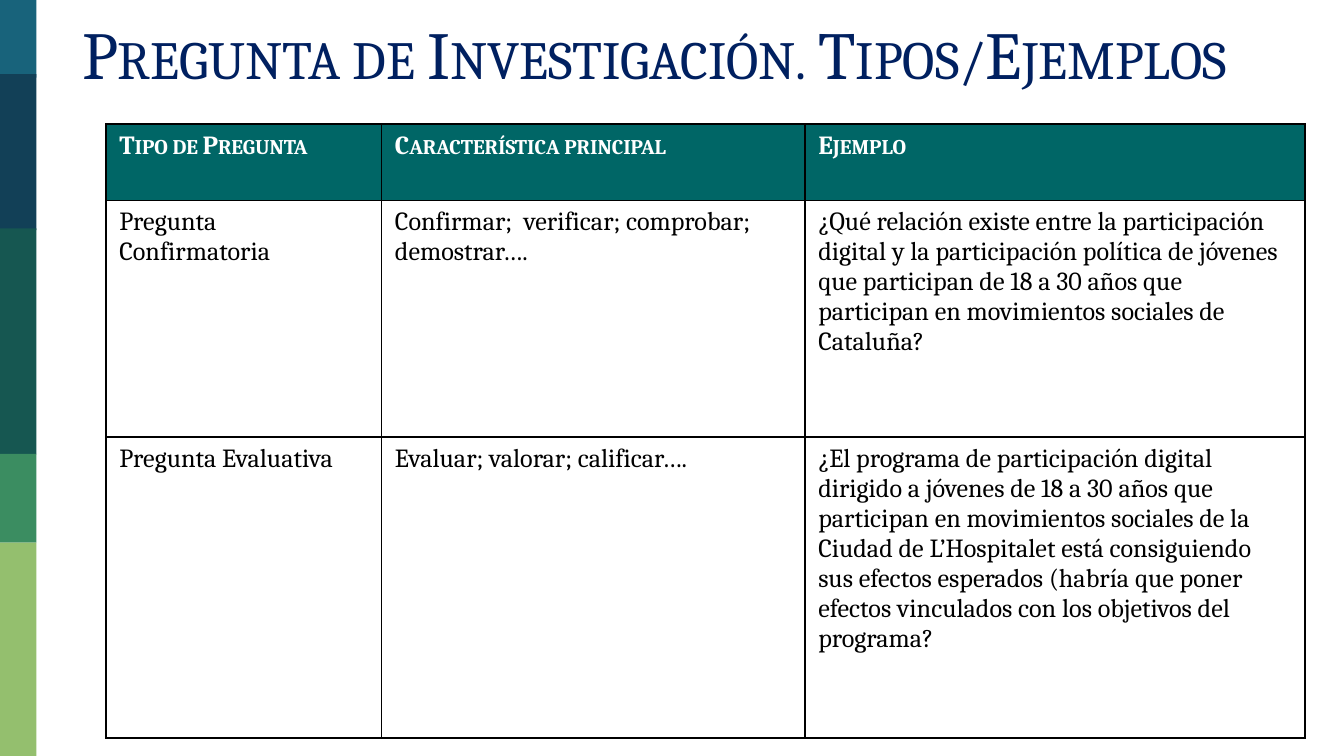
from lxml.etree import SubElement
from pptx import Presentation
from pptx.dml.color import RGBColor
from pptx.enum.shapes import MSO_SHAPE
from pptx.enum.text import MSO_ANCHOR, MSO_AUTO_SIZE, PP_ALIGN
from pptx.oxml.ns import qn
from pptx.util import Cm, Pt

FONT = "Cambria"
WHITE = RGBColor(0xFF, 0xFF, 0xFF)
BLACK = RGBColor(0x00, 0x00, 0x00)
NAVY = RGBColor(0x00, 0x20, 0x60)
TEAL = RGBColor(0x00, 0x66, 0x66)

# Colour, top and height in centimetres
SIDEBAR_BANDS = [
    (RGBColor(0x18, 0x63, 0x7B), 0, 1.47),
    (RGBColor(0x12, 0x40, 0x57), 1.4, 2.95),
    (RGBColor(0x16, 0x57, 0x51), 4.32, 4.27),
    (RGBColor(0x3B, 0x8D, 0x61), 8.58, 1.68),
    (RGBColor(0x94, 0xBF, 0x6E), 10.26, 4.03),
]

COLUMN_WIDTHS = [5.21, 8, 9.45]
ROW_HEIGHTS = [1.45, 4.47, 5.69]
QUESTION_ROWS = [
    ("Tipo de Pregunta", "Característica principal", "Ejemplo"),
    (
        "Pregunta Confirmatoria",
        "Confirmar;  verificar; comprobar; demostrar….",
        "¿Qué relación existe entre la participación digital y la "
        "participación política de jóvenes que participan de 18 a 30 años "
        "que participan en movimientos sociales de Cataluña?",
    ),
    (
        "Pregunta Evaluativa",
        "Evaluar; valorar; calificar….",
        "¿El programa de participación digital dirigido a jóvenes de 18 a 30 "
        "años que participan en movimientos sociales de la Ciudad de "
        "L’Hospitalet está consiguiendo sus efectos esperados (habría que "
        "poner efectos vinculados con los objetivos del programa?",
    ),
]


def write_text(text_frame, text, size=14, color=BLACK, bold=False, small_caps=False):
    paragraph = text_frame.paragraphs[0]
    paragraph.alignment = PP_ALIGN.LEFT
    run = paragraph.add_run()
    run.text = text
    run.font.name = FONT
    run.font.size = Pt(size)
    run.font.bold = bold
    run.font.color.rgb = color
    if small_caps:
        run.font._element.set("cap", "small")
    return paragraph


def add_borders(cell, color=BLACK, width=1):
    """Outline all four sides; call before filling, as borders precede the fill in the XML."""
    properties = cell._tc.get_or_add_tcPr()
    for side in ("a:lnL", "a:lnR", "a:lnT", "a:lnB"):
        line = SubElement(properties, qn(side), w=str(Pt(width)))
        fill = SubElement(line, qn("a:solidFill"))
        SubElement(fill, qn("a:srgbClr"), val=str(color))


def add_sidebar(slide, left, top, width):
    for color, offset, height in SIDEBAR_BANDS:
        band = slide.shapes.add_shape(
            MSO_SHAPE.RECTANGLE, left, top + Cm(offset), width, Cm(height)
        )
        band.shadow.inherit = False
        band.fill.solid()
        band.fill.fore_color.rgb = color
        band.line.fill.background()


def add_title(slide, left, top, width, height):
    title = slide.shapes.title
    title.left, title.top, title.width, title.height = left, top, width, height
    frame = title.text_frame
    frame.word_wrap = True
    frame.auto_size = MSO_AUTO_SIZE.NONE
    frame.vertical_anchor = MSO_ANCHOR.TOP
    frame.margin_left = frame.margin_right = Cm(0.25)
    frame.margin_top = frame.margin_bottom = Cm(0.25)
    paragraph = write_text(
        frame, "Pregunta de Investigación. Tipos/Ejemplos",
        size=36, color=NAVY, small_caps=True,
    )
    paragraph.space_before = Pt(6)
    paragraph.line_spacing = 0.9


def add_question_table(slide, left, top, width, height):
    table = slide.shapes.add_table(
        len(ROW_HEIGHTS), len(COLUMN_WIDTHS), left, top, width, height
    ).table
    table.horz_banding = False
    for column, share in zip(table.columns, COLUMN_WIDTHS):
        column.width = int(width * share / sum(COLUMN_WIDTHS))
    for row, share in zip(table.rows, ROW_HEIGHTS):
        row.height = int(height * share / sum(ROW_HEIGHTS))
    for row_index, texts in enumerate(QUESTION_ROWS):
        header = row_index == 0
        for column_index, text in enumerate(texts):
            cell = table.cell(row_index, column_index)
            add_borders(cell)
            cell.fill.solid()
            cell.fill.fore_color.rgb = TEAL if header else WHITE
            write_text(
                cell.text_frame, text, color=WHITE if header else BLACK,
                bold=header, small_caps=header,
            )


def main():
    presentation = Presentation()
    presentation.slide_width = Cm(25.4)
    presentation.slide_height = Cm(14.29)
    slide = presentation.slides.add_slide(presentation.slide_layouts[5])
    add_sidebar(slide, Cm(0), Cm(0), Cm(0.69))
    add_question_table(slide, Cm(2), Cm(2.34), Cm(22.66), Cm(11.61))
    add_title(slide, Cm(1.3), Cm(0.15), Cm(23.6), Cm(1.45))
    presentation.save("out.pptx")


if __name__ == "__main__":
    main()
